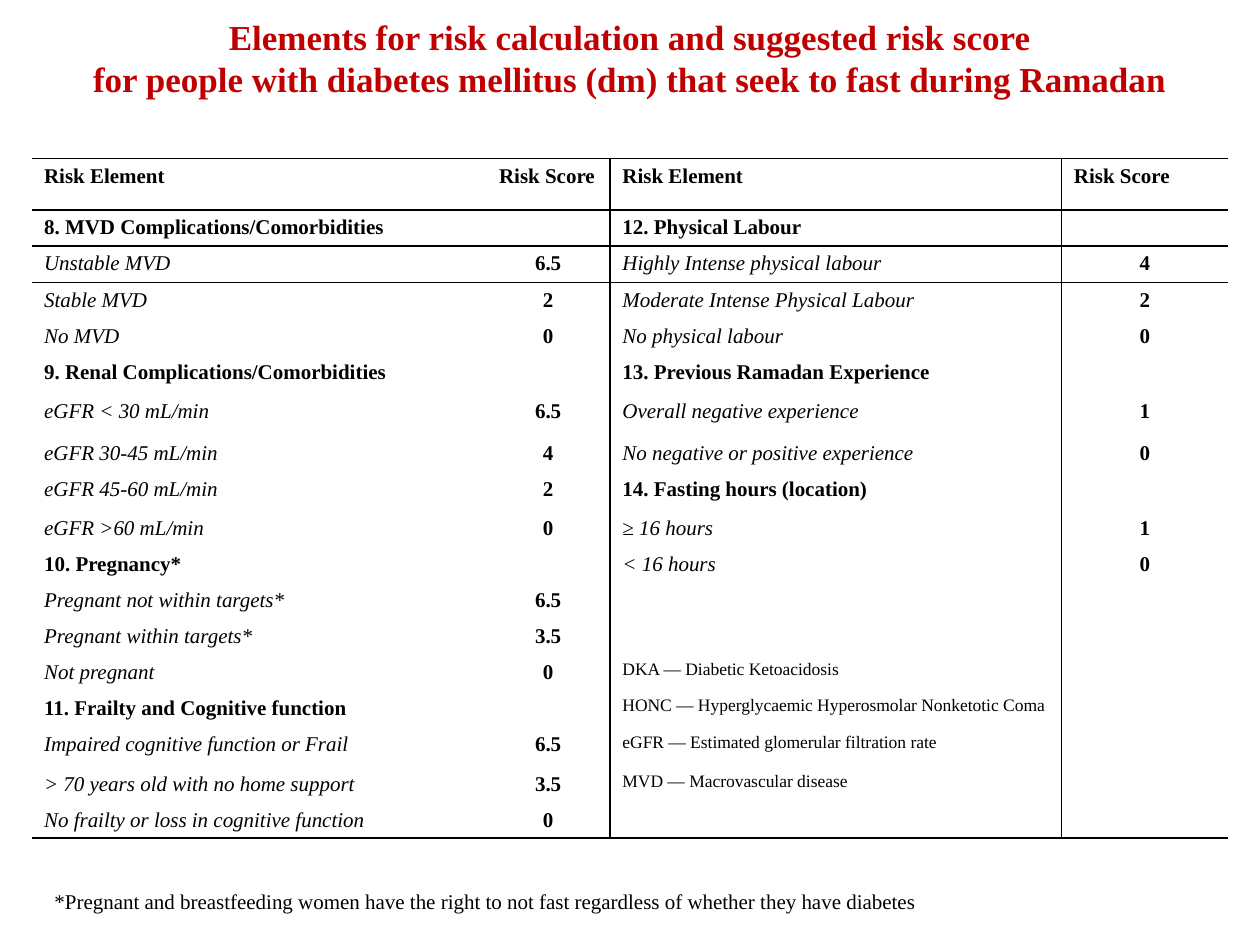
from dataclasses import dataclass

from lxml import etree
from pptx import Presentation
from pptx import util as u
from pptx.dml.color import RGBColor
from pptx.enum import text
from pptx.oxml import ns

FONT = "Times New Roman"
COLORS = {"title": "C00000", "ink": "000000"}
NO_GRID_STYLE = "{2D5ABB26-0587-4C30-8999-92F81FD0307C}"
COLUMN_WIDTHS = (260, 70.5, 258, 95.5)
HEADER_HEIGHT, ROW_HEIGHT = 29.5, 20.5
TALL_ROWS = {2: 21, 5: 22.5, 6: 23.75, 8: 22.25, 14: 21, 15: 22.5}
RULE, THIN_RULE = 1, 0.5


@dataclass(frozen=True)
class Entry:
    label: str = ""
    score: str = ""
    size: float = 12
    bold: bool = False
    italic: bool = False


def heading(label: str, score: str = "") -> Entry:
    return Entry(label, score, bold=True)


def item(label: str, score: str) -> Entry:
    return Entry(label, score, italic=True)


def note(label: str) -> Entry:
    return Entry(label, size=10)


HEADER = heading("Risk Element", "Risk Score")

LEFT = [
    HEADER,
    heading("8. MVD Complications/Comorbidities"),
    item("Unstable MVD", "6.5"),
    item("Stable MVD", "2"),
    item("No MVD", "0"),
    heading("9. Renal Complications/Comorbidities"),
    item("eGFR < 30 mL/min", "6.5"),
    item("eGFR 30-45 mL/min", "4"),
    item("eGFR 45-60 mL/min", "2"),
    item("eGFR >60 mL/min", "0"),
    heading("10. Pregnancy*"),
    item("Pregnant not within targets*", "6.5"),
    item("Pregnant within targets*", "3.5"),
    item("Not pregnant", "0"),
    heading("11. Frailty and Cognitive function"),
    item("Impaired cognitive function or Frail", "6.5"),
    item("> 70 years old with no home support", "3.5"),
    item("No frailty or loss in cognitive function", "0"),
]

RIGHT = [
    HEADER,
    heading("12. Physical Labour"),
    item("Highly Intense physical labour", "4"),
    item("Moderate Intense Physical Labour", "2"),
    item("No physical labour", "0"),
    heading("13. Previous Ramadan Experience"),
    item("Overall negative experience", "1"),
    item("No negative or positive experience", "0"),
    heading("14. Fasting hours (location)"),
    item("≥ 16 hours", "1"),
    item("< 16 hours", "0"),
    Entry(),
    Entry(),
    note("DKA — Diabetic Ketoacidosis"),
    note("HONC — Hyperglycaemic Hyperosmolar Nonketotic Coma"),
    note("eGFR — Estimated glomerular filtration rate"),
    note("MVD — Macrovascular disease"),
    Entry(),
]


def style(paragraph, size: float, color: str = "ink", bold: bool = False,
          italic: bool = False, centered: bool = False) -> None:
    font = paragraph.font
    font.name, font.size = FONT, u.Pt(size)
    font.bold, font.italic = bold, italic
    font.color.rgb = RGBColor.from_string(COLORS[color])
    if centered:
        paragraph.alignment = text.PP_ALIGN.CENTER


def add_text(slide, left: float, top: float, width: float, height: float,
             lines: list[str], **look) -> None:
    shape = slide.shapes.add_textbox(u.Pt(left), u.Pt(top), u.Pt(width), u.Pt(height))
    frame = shape.text_frame
    frame.word_wrap = True
    frame.vertical_anchor = text.MSO_ANCHOR.MIDDLE
    frame.text = "\n".join(lines)
    for paragraph in frame.paragraphs:
        style(paragraph, **look)


def fill_cell(cell, content: str, size: float, bold: bool, italic: bool,
              centered: bool = False) -> None:
    cell.fill.background()
    paragraph = cell.text_frame.paragraphs[0]
    paragraph.text = content
    style(paragraph, size, bold=bold, italic=italic, centered=centered)
    if not content:
        # An empty cell must not be taller than the text rows
        end = etree.SubElement(paragraph._p, ns.qn("a:endParaRPr"))
        end.set("sz", str(int(size * 100)))


def set_borders(cell, borders: dict[str, float]) -> None:
    properties = cell._tc.get_or_add_tcPr()
    sides = [side for side in "LRTB" if side in borders]
    for index, side in enumerate(sides):
        line = etree.Element(ns.qn(f"a:ln{side}"), w=str(int(u.Pt(borders[side]))))
        fill = etree.SubElement(line, ns.qn("a:solidFill"))
        etree.SubElement(fill, ns.qn("a:srgbClr"), val=COLORS["ink"])
        properties.insert(index, line)


def cell_borders(row: int, column: int, last_row: int) -> dict[str, float]:
    borders = {}
    if row <= 2:
        borders["T"] = RULE
    if row <= 1 or row == last_row:
        borders["B"] = RULE
    # Heavy rule between the two halves, thin rule before the last scores
    for left_column, width in ((1, RULE), (2, THIN_RULE)):
        if column == left_column:
            borders["R"] = width
        elif column == left_column + 1:
            borders["L"] = width
    return borders


def add_risk_table(slide) -> None:
    heights = [HEADER_HEIGHT] + [TALL_ROWS.get(row, ROW_HEIGHT)
                                 for row in range(1, len(LEFT))]
    frame = slide.shapes.add_table(
        len(LEFT), len(COLUMN_WIDTHS), u.Pt(18), u.Pt(90.5),
        u.Pt(sum(COLUMN_WIDTHS)), u.Pt(sum(heights)))
    table = frame.table
    table.first_row = table.horz_banding = False
    table._tbl.tblPr.find(ns.qn("a:tableStyleId")).text = NO_GRID_STYLE
    for column, width in zip(table.columns, COLUMN_WIDTHS):
        column.width = u.Pt(width)
    for row, height in zip(table.rows, heights):
        row.height = u.Pt(height)

    for row, entries in enumerate(zip(LEFT, RIGHT)):
        for half, entry in enumerate(entries):
            fill_cell(table.cell(row, 2 * half), entry.label,
                      entry.size, entry.bold, entry.italic)
            fill_cell(table.cell(row, 2 * half + 1), entry.score,
                      12, True, False, centered=row > 0)
        for column in range(len(COLUMN_WIDTHS)):
            set_borders(table.cell(row, column),
                        cell_borders(row, column, len(LEFT) - 1))


def main() -> None:
    presentation = Presentation()
    presentation.slide_width, presentation.slide_height = u.Pt(720), u.Pt(540)
    slide = presentation.slides.add_slide(presentation.slide_layouts[6])

    # Risk scores
    add_risk_table(slide)

    # Title
    add_text(slide, 18, 6, 684, 54,
             ["Elements for risk calculation and suggested risk score",
              "for people with diabetes mellitus (dm) that seek to fast during Ramadan"],
             size=20, color="title", bold=True, centered=True)

    # Footnote
    add_text(slide, 24, 504, 588, 22,
             ["*Pregnant and breastfeeding women have the right to not fast "
              "regardless of whether they have diabetes"], size=12)

    presentation.save("out.pptx")


if __name__ == "__main__":
    main()
